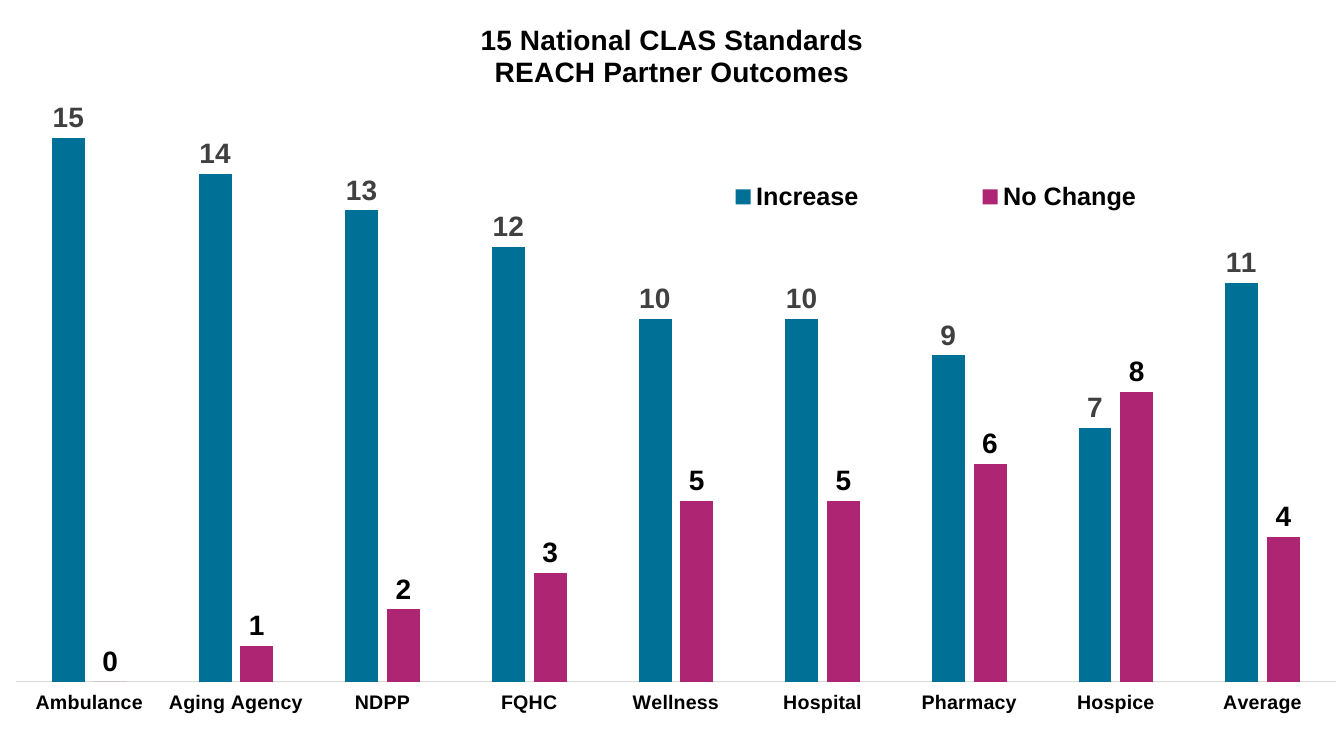
from lxml.etree import SubElement
from pptx import Presentation
from pptx.chart.data import CategoryChartData
from pptx.dml.color import RGBColor
from pptx.enum.chart import XL_CHART_TYPE as ChartType
from pptx.enum.chart import XL_LABEL_POSITION as LabelPosition
from pptx.enum.chart import XL_LEGEND_POSITION as LegendPosition
from pptx.enum.chart import XL_TICK_LABEL_POSITION as TickLabelPosition
from pptx.enum.chart import XL_TICK_MARK as TickMark
from pptx.oxml.ns import qn
from pptx.util import Emu, Pt

WIDTH, HEIGHT = 1344, 756
EMU_PER_PX = 914400 / 100.8
BLANK_LAYOUT = 6

TITLE_LINES = ["15 National CLAS Standards", "REACH Partner Outcomes"]
PARTNERS = ["Ambulance", "Aging Agency", "NDPP", "FQHC", "Wellness",
            "Hospital", "Pharmacy", "Hospice", "Average"]
# name, values, bar colour, label colour
OUTCOMES = [
    ("Increase", [15, 14, 13, 12, 10, 10, 9, 7, 11], "007096", "404040"),
    ("No Change", [0, 1, 2, 3, 5, 5, 6, 8, 4], "AE2573", "000000"),
]


def px(length):
    return Emu(round(length * EMU_PER_PX))


def color(hex_code):
    return RGBColor.from_string(hex_code)


class OutcomeSlide:
    font_name = "Arial"
    text_color = "000000"
    axis_color = "D9D9D9"

    def __init__(self, presentation):
        layout = presentation.slide_layouts[BLANK_LAYOUT]
        self.slide = presentation.slides.add_slide(layout)

    def style_font(self, font, size, bold=True, hex_code=None):
        font.name = self.font_name
        font.size = Pt(size)
        font.bold = bold
        font.color.rgb = color(hex_code or self.text_color)

    def place(self, layout, left, top, width, height, inner=False):
        """Fill a chart layout element with a position given in px."""
        for child in list(layout):
            layout.remove(child)
        manual = SubElement(layout, qn("c:manualLayout"))
        settings = [("layoutTarget", "inner")] if inner else []
        settings += [("xMode", "edge"), ("yMode", "edge"),
                     ("x", left / WIDTH), ("y", top / HEIGHT),
                     ("w", width / WIDTH), ("h", height / HEIGHT)]
        for tag, value in settings:
            text = value if isinstance(value, str) else f"{value:.4f}"
            SubElement(manual, qn(f"c:{tag}")).set("val", text)

    def add_column_chart(self, left, top, width, height):
        data = CategoryChartData(number_format="General")
        data.categories = PARTNERS
        for name, values, _, _ in OUTCOMES:
            data.add_series(name, values)
        frame = self.slide.shapes.add_chart(
            ChartType.COLUMN_CLUSTERED, px(left), px(top), px(width), px(height), data)
        chart = frame.chart
        self.style_font(chart.font, 10, bold=False)
        return chart

    def add_title(self, chart, lines):
        chart.has_title = True
        chart.chart_title.include_in_layout = False
        text_frame = chart.chart_title.text_frame
        for index, line in enumerate(lines):
            paragraph = text_frame.add_paragraph() if index else text_frame.paragraphs[0]
            run = paragraph.add_run()
            run.text = line
            self.style_font(run.font, 20)

    def style_columns(self, chart):
        plot = chart.plots[0]
        plot.vary_by_categories = False
        plot.gap_width = 219
        plot.overlap = -27
        for series, (_, _, fill, label_color) in zip(plot.series, OUTCOMES):
            series.invert_if_negative = False
            series.format.fill.solid()
            series.format.fill.fore_color.rgb = color(fill)
            labels = series.data_labels
            labels.show_value = True
            labels.position = LabelPosition.OUTSIDE_END
            self.style_font(labels.font, 20, hex_code=label_color)

    def style_axes(self, chart):
        partners = chart.category_axis
        partners.major_tick_mark = partners.minor_tick_mark = TickMark.NONE
        partners.tick_label_position = TickLabelPosition.LOW
        partners.format.line.color.rgb = color(self.axis_color)
        partners.format.line.width = Pt(0.75)
        self.style_font(partners.tick_labels.font, 14)
        counts = chart.value_axis
        counts.visible = False
        counts.has_major_gridlines = False
        counts.minimum_scale, counts.maximum_scale = 0, 15
        counts.major_unit = 1

    def place_plot(self, chart, left, top, width, height):
        plot_area = chart.plots[0]._element.getparent()
        layout = plot_area.find(qn("c:layout"))
        if layout is None:
            layout = SubElement(plot_area, qn("c:layout"))
            plot_area.insert(0, layout)
        self.place(layout, left, top, width, height, inner=True)

    def add_legend(self, chart, left, top, width, height):
        chart.has_legend = True
        legend = chart.legend
        legend.position = LegendPosition.BOTTOM
        legend.include_in_layout = False
        self.style_font(legend.font, 18)
        element = legend._element
        layout = element.find(qn("c:layout"))
        if layout is None:
            layout = SubElement(element, qn("c:layout"))
            element.find(qn("c:legendPos")).addnext(layout)
        self.place(layout, left, top, width, height)


def main():
    presentation = Presentation()
    presentation.slide_width, presentation.slide_height = px(WIDTH), px(HEIGHT)
    outcomes = OutcomeSlide(presentation)
    chart = outcomes.add_column_chart(0, 0, WIDTH, HEIGHT)
    outcomes.add_title(chart, TITLE_LINES)
    outcomes.style_columns(chart)
    outcomes.style_axes(chart)
    outcomes.place_plot(chart, 16, 138, 1320, 544)
    outcomes.add_legend(chart, 620, 172, 632, 50)
    presentation.save("out.pptx")


if __name__ == "__main__":
    main()
